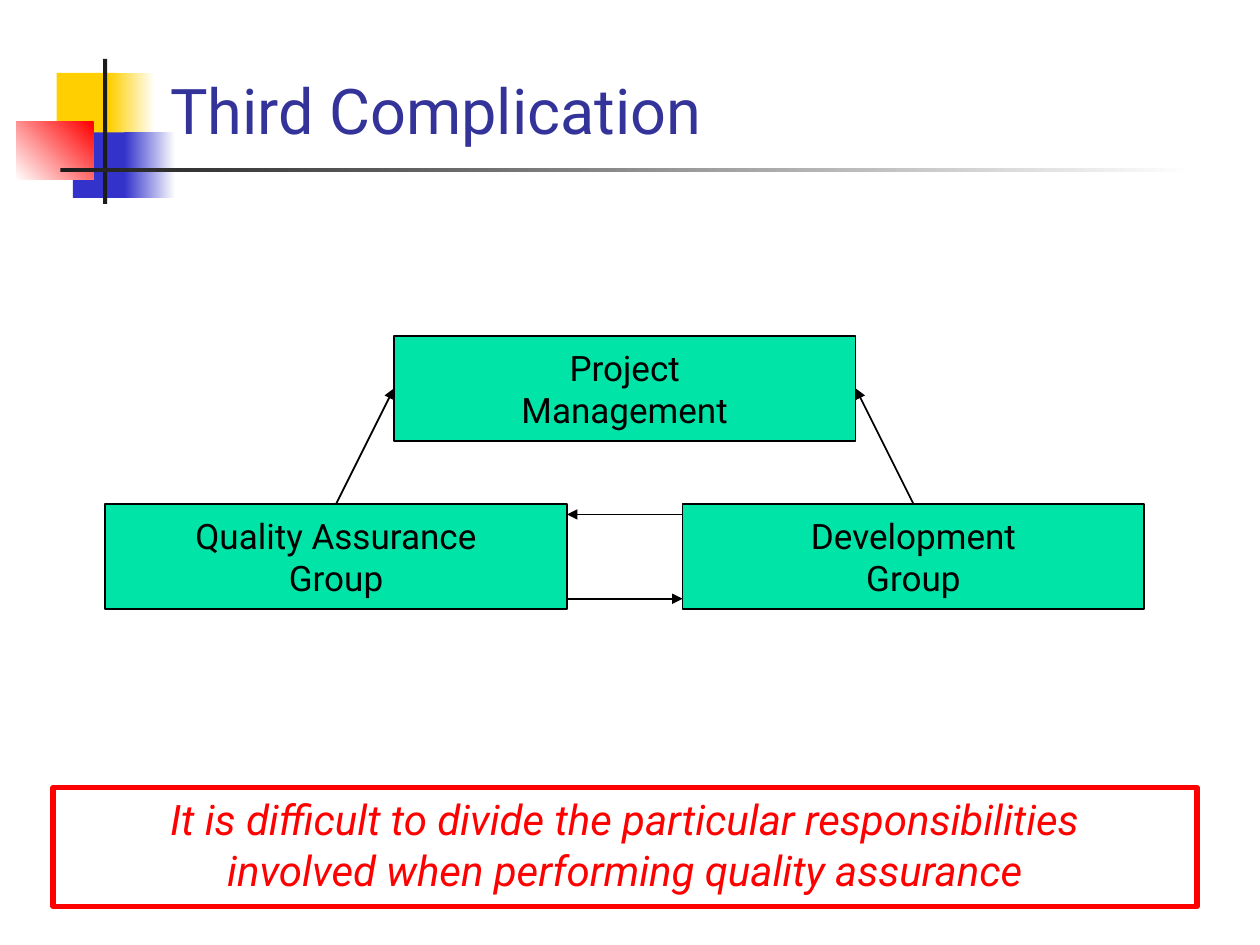
import pptx
import pptx.util
from lxml import etree
from pptx.dml.color import RGBColor
from pptx.enum.shapes import MSO_CONNECTOR, MSO_SHAPE
from pptx.enum.text import MSO_ANCHOR, PP_ALIGN
from pptx.oxml.ns import qn

Cm = pptx.util.Cm
Pt = pptx.util.Pt

FONT = "Roboto"
TITLE = "Third Complication"
CONCLUSION = (
    "It is difficult to divide the particular responsibilities\n"
    "involved when performing quality assurance"
)
DECORATION = [
    ((1.14, 1.47, 1.22, 1.32), ["FFCF01"], 0),
    ((2.21, 1.47, 0.91, 1.32), ["FFCF01", "FFFFFF"], 0),
    ((1.47, 2.67, 1.17, 1.32), ["3333CC"], 0),
    ((2.51, 2.67, 1.02, 1.32), ["3333CC", "FFFFFF"], 0),
    ((0.33, 2.46, 1.55, 1.17), ["FFFFFF", "FF0000"], 45),
    ((2.08, 1.19, 0.08, 2.92), ["1C1C1C"], 0),
    ((1.22, 3.38, 22.86, 0.08), ["1C1C1C", "FFFFFF"], 0),
]
BOX_WIDTH, BOX_HEIGHT = 9.31, 2.12
ARROW_INSET = 0.21
GROUPS = {
    "management": ("Project\nManagement", 7.94, 6.77),
    "development": ("Development\nGroup", 13.76, 10.16),
    "quality": ("Quality Assurance\nGroup", 2.12, 10.16),
}


def color(value):
    return RGBColor.from_string(value)


def write_text(shape, text, size, text_color, align=PP_ALIGN.CENTER,
               anchor=MSO_ANCHOR.MIDDLE, wrap=True, italic=False):
    frame = shape.text_frame
    frame.word_wrap = wrap
    frame.vertical_anchor = anchor
    paragraph = frame.paragraphs[0]
    paragraph.text = text
    paragraph.alignment = align
    for run in paragraph.runs:
        run.font.name = FONT
        run.font.size = Pt(size)
        run.font.italic = italic
        run.font.color.rgb = color(text_color)


def add_rectangle(slide, place, fills=(), angle=0, line=None, line_width=1):
    shape = slide.shapes.add_shape(MSO_SHAPE.RECTANGLE, *map(Cm, place))
    shape.shadow.inherit = False
    if len(fills) == 2:
        shape.fill.gradient()
        shape.fill.gradient_angle = angle
        for stop, value in zip(shape.fill.gradient_stops, fills):
            stop.color.rgb = color(value)
    elif fills:
        shape.fill.solid()
        shape.fill.fore_color.rgb = color(fills[0])
    else:
        shape.fill.background()
    if line:
        shape.line.color.rgb = color(line)
        shape.line.width = Pt(line_width)
    else:
        shape.line.fill.background()
    return shape


def add_arrow(slide, start, end):
    arrow = slide.shapes.add_connector(
        MSO_CONNECTOR.STRAIGHT, *map(Cm, (*start, *end)))
    arrow.line.color.rgb = color("000000")
    arrow.line.width = Pt(1)
    line = arrow.line._get_or_add_ln()
    etree.SubElement(line, qn("a:tailEnd"), type="triangle")
    etree.SubElement(arrow._element.spPr, qn("a:effectLst"))


def point(name, across, down):
    _, left, top = GROUPS[name]
    return left + across * BOX_WIDTH, top + down


def main():
    presentation = pptx.Presentation()
    presentation.slide_width = Cm(25.4)
    presentation.slide_height = Cm(19.05)
    slide = presentation.slides.add_slide(presentation.slide_layouts[6])

    for place, fills, angle in DECORATION:
        add_rectangle(slide, place, fills, angle)

    title = slide.shapes.add_textbox(Cm(3.18), Cm(0.99), Cm(21.64), Cm(2.11))
    write_text(title, TITLE, 36, "333399", align=PP_ALIGN.LEFT,
               anchor=MSO_ANCHOR.BOTTOM)

    conclusion = add_rectangle(slide, (1.07, 15.88, 23.06, 2.39),
                               line="FF0000", line_width=3)
    write_text(conclusion, CONCLUSION, 24, "FF0000",
               anchor=MSO_ANCHOR.TOP, italic=True)

    for text, left, top in GROUPS.values():
        box = add_rectangle(slide, (left, top, BOX_WIDTH, BOX_HEIGHT),
                            ["00E4A8"], line="000000")
        write_text(box, text, 20, "000000", wrap=False)

    upper, lower = ARROW_INSET, BOX_HEIGHT - ARROW_INSET
    middle = BOX_HEIGHT / 2
    add_arrow(slide, point("development", 0, upper), point("quality", 1, upper))
    add_arrow(slide, point("quality", 1, lower), point("development", 0, lower))
    add_arrow(slide, point("quality", 0.5, 0), point("management", 0, middle))
    add_arrow(slide, point("development", 0.5, 0), point("management", 1, middle))

    presentation.save("out.pptx")


if __name__ == "__main__":
    main()
